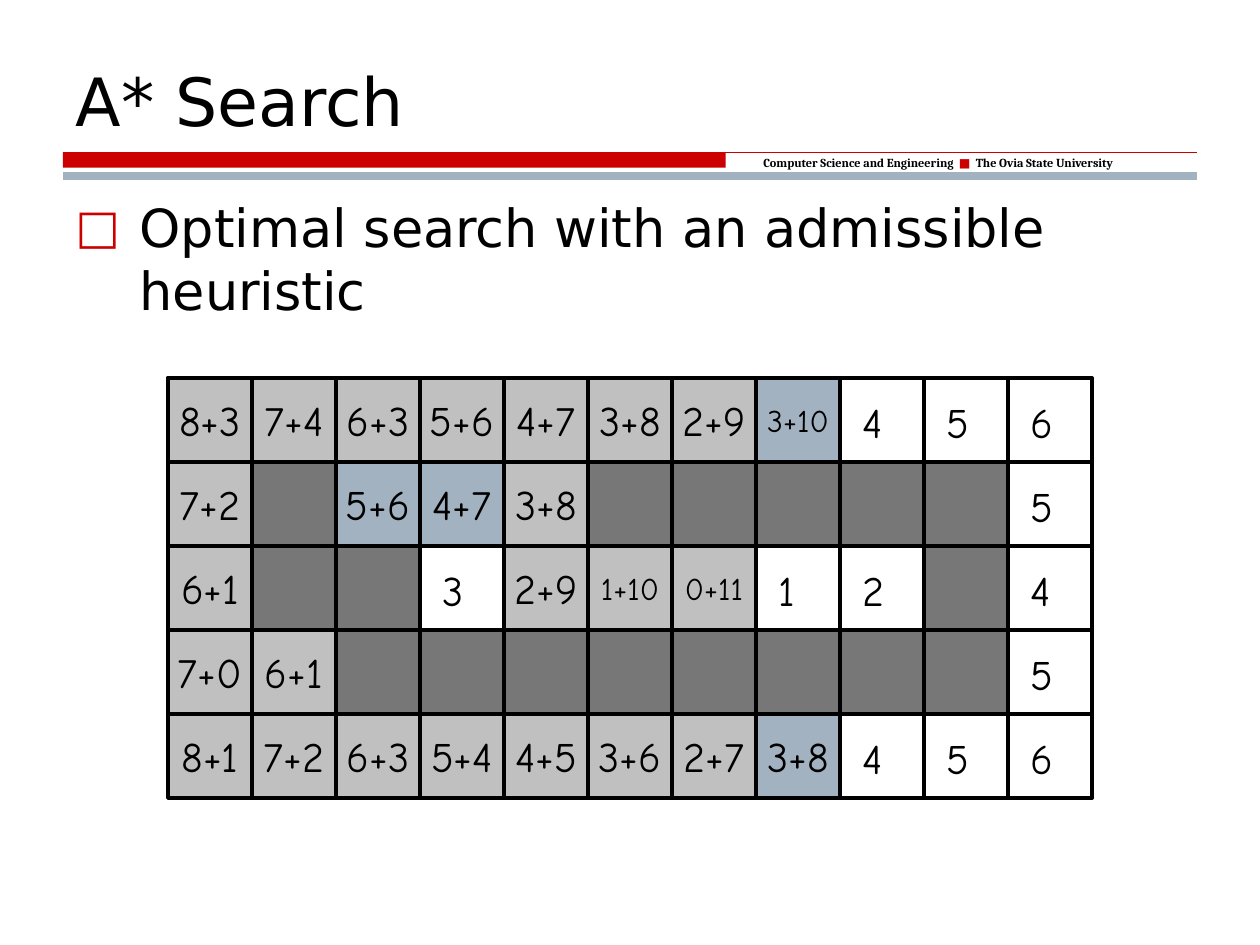
"""Build the A* Search slide with its grid of path cost estimates."""
from lxml import etree
from pptx import Presentation
from pptx.dml.color import RGBColor
from pptx.enum.shapes import MSO_CONNECTOR, MSO_SHAPE
from pptx.enum.text import MSO_ANCHOR, MSO_AUTO_SIZE, PP_ALIGN
from pptx.oxml.ns import qn
from pptx.util import Inches, Pt

RECTANGLE = MSO_SHAPE.RECTANGLE
STRAIGHT = MSO_CONNECTOR.STRAIGHT
MIDDLE, BOTTOM = MSO_ANCHOR.MIDDLE, MSO_ANCHOR.BOTTOM
LEFT, CENTER = PP_ALIGN.LEFT, PP_ALIGN.CENTER
NO_FIT, GROW = MSO_AUTO_SIZE.NONE, MSO_AUTO_SIZE.SHAPE_TO_FIT_TEXT
COLORS = {"text": "000000", "red": "CC0000", "frontier": "A3B2C1",
          "visited": "C0C0C0", "wall": "777777"}
SANS, SERIF, HAND = "DejaVu Sans", "Cambria", "Comic Neue"
CELL, GRID_LEFT, GRID_TOP = 2 / 3, 4 / 3, 3
GRID = [row.split() for row in (
    "8+3 7+4 6+3 5+6 4+7 3+8 2+9 3+10 4 5 6",
    "7+2 # 5+6 4+7 3+8 # # # # # 5",
    "6+1 # # 3 2+9 1+10 0+11 1 2 # 4",
    "7+0 6+1 # # # # # # # # 5",
    "8+1 7+2 6+3 5+4 4+5 3+6 2+7 3+8 4 5 6",
)]
FRONTIER = {(0, 7), (1, 2), (1, 3), (4, 7)}
ROWS, COLUMNS = len(GRID), len(GRID[0])


def write(shape, runs, align=LEFT, **frame_format):
    frame = shape.text_frame
    for name, value in frame_format.items():
        setattr(frame, name, value)
    paragraph = frame.paragraphs[0]
    paragraph.alignment = align
    for text, font, size, color, bold in runs:
        run = paragraph.add_run()
        run.text = text
        for name, value in {"name": font, "size": Pt(size), "bold": bold}.items():
            setattr(run.font, name, value)
        run.font.color.rgb = RGBColor.from_string(COLORS[color])
    return paragraph


def add_line(x1, y1, x2, y2, color, width):
    line = slide.shapes.add_connector(
        STRAIGHT, Inches(x1), Inches(y1), Inches(x2), Inches(y2))
    line.line.color.rgb = RGBColor.from_string(COLORS[color])
    line.line.width = Pt(width)
    etree.SubElement(line._element.spPr, qn("a:effectLst"))


deck = Presentation()
deck.slide_width, deck.slide_height = Inches(10), Inches(7.5)
slide = deck.slides.add_slide(deck.slide_layouts[5])

title = slide.shapes.title
for name, value in {"left": 0.5, "top": 0.25, "width": 9, "height": 0.91}.items():
    setattr(title, name, Inches(value))
write(title, [("A* Search", SANS, 38, "text", False)],
      vertical_anchor=BOTTOM, word_wrap=True, auto_size=NO_FIT)

red_bar = slide.shapes.add_shape(
    RECTANGLE, Inches(0.5), Inches(1.21), Inches(5.26), Inches(0.12))
red_bar.shadow.inherit = False
red_bar.fill.solid()
red_bar.fill.fore_color.rgb = RGBColor.from_string(COLORS["red"])
red_bar.line.fill.background()
add_line(0.5, 1.21, 9.5, 1.21, "red", 0.75)
add_line(0.5, 1.4, 9.5, 1.4, "frontier", 4.5)

department = slide.shapes.add_textbox(
    Inches(5.96), Inches(1.18), Inches(3.41), Inches(0.22))
write(department, [
    ("Computer Science and Engineering  ", SERIF, 7, "text", True),
    ("■", SANS, 7, "red", False),
    ("  The Ovia State University", SERIF, 7, "text", True),
], word_wrap=False, auto_size=GROW)

summary = slide.shapes.add_textbox(
    Inches(0.5), Inches(1.5), Inches(9), Inches(5.75))
point = write(
    summary, [("Optimal search with an admissible heuristic", SANS, 30, "text", False)],
    word_wrap=True, auto_size=NO_FIT)
point.space_before = Pt(6)
point_format = point._p.get_or_add_pPr()
point_format.set("marL", str(Inches(0.51)))
point_format.set("indent", str(-Inches(0.51)))
bullet_color = etree.SubElement(point_format, qn("a:buClr"))
etree.SubElement(bullet_color, qn("a:srgbClr"), val=COLORS["red"])
etree.SubElement(point_format, qn("a:buSzPct"), val="90000")
etree.SubElement(point_format, qn("a:buFont"), typeface=SANS)
etree.SubElement(point_format, qn("a:buChar"), char="□")

grid_right = GRID_LEFT + COLUMNS * CELL
grid_bottom = GRID_TOP + ROWS * CELL
border = slide.shapes.add_shape(
    RECTANGLE, Inches(GRID_LEFT), Inches(GRID_TOP),
    Inches(COLUMNS * CELL), Inches(ROWS * CELL))
border.shadow.inherit = False
border.fill.background()
border.line.color.rgb = RGBColor.from_string(COLORS["text"])
border.line.width = Pt(2.25)
for column in range(1, COLUMNS):
    x = GRID_LEFT + column * CELL
    add_line(x, GRID_TOP, x, grid_bottom, "text", 2.25)
for row in range(1, ROWS):
    y = GRID_TOP + row * CELL
    add_line(GRID_LEFT, y, grid_right, y, "text", 2.25)

for row, labels in enumerate(GRID):
    for column, label in enumerate(labels):
        x, y = GRID_LEFT + column * CELL, GRID_TOP + row * CELL
        if label.isdigit():
            estimate = slide.shapes.add_textbox(
                Inches(x + 0.08), Inches(y + 0.1), Inches(0.4), Inches(0.5))
            write(estimate, [(label, HAND, 24, "text", False)],
                  word_wrap=False, auto_size=GROW)
            continue
        state = ("wall" if label == "#"
                 else "frontier" if (row, column) in FRONTIER else "visited")
        cell = slide.shapes.add_shape(
            RECTANGLE, Inches(x), Inches(y), Inches(CELL), Inches(CELL))
        cell.shadow.inherit = False
        cell.fill.solid()
        cell.fill.fore_color.rgb = RGBColor.from_string(COLORS[state])
        cell.line.color.rgb = RGBColor.from_string(COLORS["text"])
        cell.line.width = Pt(2.25)
        if state != "wall":
            size = 18 if len(label) > 3 else 24
            write(cell, [(label, HAND, size, "text", False)], CENTER,
                  vertical_anchor=MIDDLE, word_wrap=False)

deck.save("out.pptx")
